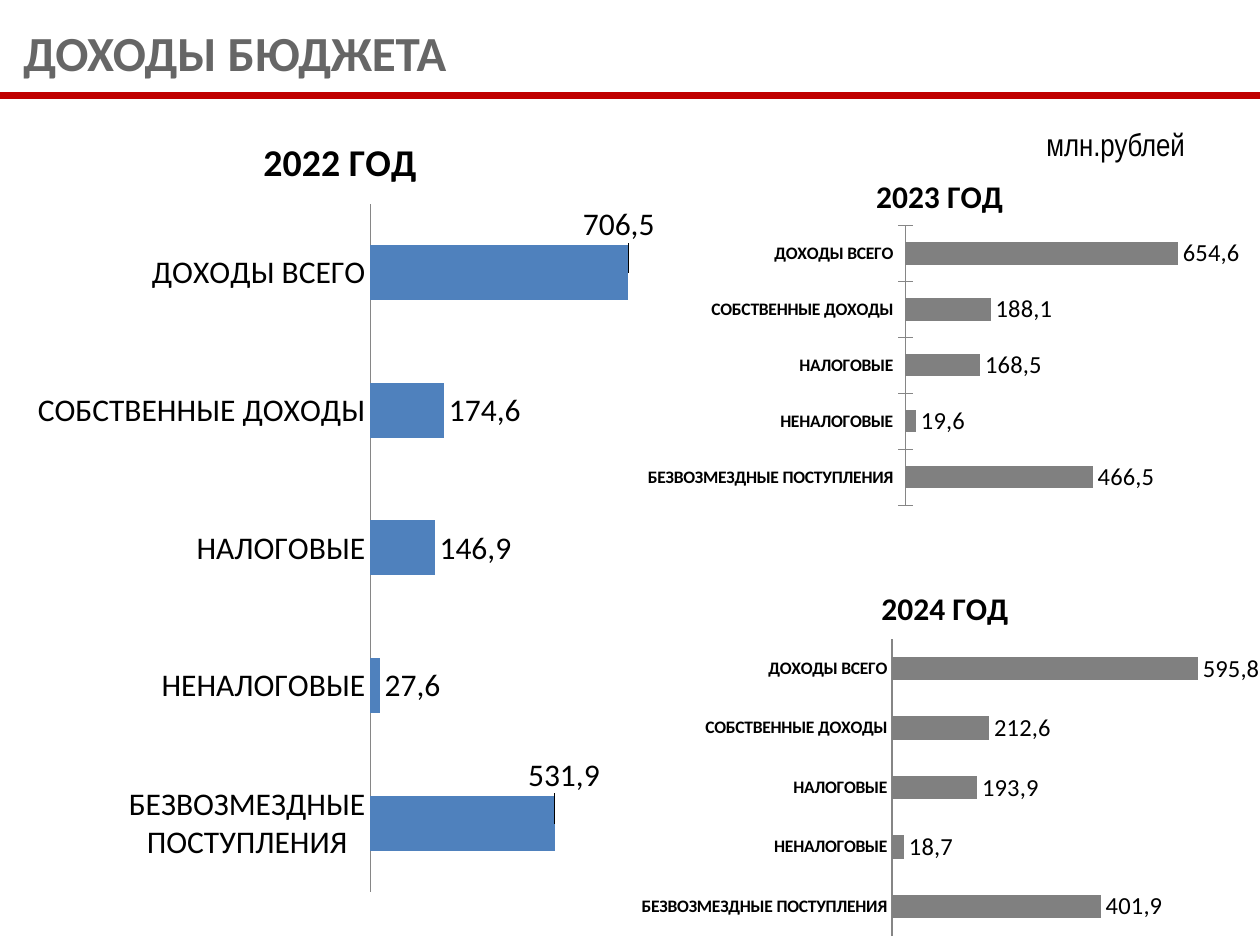
import pptx
import pptx.chart.data
import pptx.dml.color
import pptx.enum.chart
import pptx.enum.shapes
import pptx.enum.text
import pptx.oxml
import pptx.oxml.ns
import pptx.oxml.xmlchemy
import pptx.util

Inches, Pt = pptx.util.Inches, pptx.util.Pt
qn = pptx.oxml.ns.qn
new_element = pptx.oxml.xmlchemy.OxmlElement


def color(value):
    return pptx.dml.color.RGBColor.from_string(value)


def add_layout(parent, index, **settings):
    for old in parent.findall(qn("c:layout")):
        parent.remove(old)
    layout, manual = new_element("c:layout"), new_element("c:manualLayout")
    layout.append(manual)
    for name, value in settings.items():
        setting = new_element("c:" + name)
        setting.set("val", str(value))
        manual.append(setting)
    parent.insert(index, layout)


deck = pptx.Presentation()
deck.slide_width, deck.slide_height = Inches(10), Inches(7.5)
page = deck.slides.add_slide(deck.slide_layouts[6])

middle, top = pptx.enum.text.MSO_ANCHOR.MIDDLE, pptx.enum.text.MSO_ANCHOR.TOP
center, left = pptx.enum.text.PP_ALIGN.CENTER, pptx.enum.text.PP_ALIGN.LEFT
texts = [
    ((7.99, 0.99, 1.73, 0.31), middle, center, "Arial Narrow", 18, False, [("млн.рублей", "000000")]),
    ((0, 0.13, 10, 0.57), top, left, "Calibri", 28, True,
     [(" ", "376092"), ("ДОХОДЫ БЮДЖЕТА", "666666")]),
]
for place, anchor, align, font, size, bold, spans in texts:
    box = page.shapes.add_textbox(*map(Inches, place))
    box.text_frame.word_wrap = True
    box.text_frame.vertical_anchor = anchor
    para = box.text_frame.paragraphs[0]
    para.alignment = align
    for words, shade in spans:
        span = para.add_run()
        span.text = words
        span.font.name, span.font.size, span.font.bold = font, Pt(size), bold
        span.font.color.rgb = color(shade)

rule = page.shapes.add_connector(
    pptx.enum.shapes.MSO_CONNECTOR.STRAIGHT, 0, Inches(0.76), Inches(10), Inches(0.76))
rule.line.color.rgb = color("C00000")
rule.line.width = Pt(4)
rule._element.spPr.append(new_element("a:effectLst"))

categories = ["БЕЗВОЗМЕЗДНЫЕ ПОСТУПЛЕНИЯ", "НЕНАЛОГОВЫЕ", "НАЛОГОВЫЕ", "СОБСТВЕННЫЕ ДОХОДЫ", "ДОХОДЫ ВСЕГО"]
tick = pptx.enum.chart.XL_TICK_MARK
charts = [
    dict(title="2022 ГОД", place=(0.2, 0.84, 5, 6.38), plot=(2.94, 1.62, 2.16, 5.46),
         values=(406.4, 20.6, 141.8, 162.5, 568.9), labels=("531,9", "27,6", "146,9", "174,6", "706,5"),
         fill="4F81BD", title_size=21.6, axis_size=18, label_size=18, bold=False, overlap=-25,
         tick=tick.NONE, shifts={0: (-0.05, -0.06), 4: (-0.08, -0.06)}),
    dict(title="2023 ГОД", place=(5.08, 1.23, 4.76, 2.84), plot=(7.19, 1.79, 2.48, 2.22),
         values=(360, 20.2, 143.6, 163.8, 523.8), labels=("466,5", "19,6", "168,5", "188,1", "654,6"),
         fill="808080", title_size=18, axis_size=10, label_size=14, bold=True, overlap=0,
         tick=tick.CROSS, shifts={}),
    dict(title="2024 ГОД", place=(5, 4.5, 5, 3), plot=(7.08, 5.07, 2.78, 2.36),
         values=(357.6, 20.5, 145.8, 166.3, 523.8), labels=("401,9", "18,7", "193,9", "212,6", "595,8"),
         fill="808080", title_size=18, axis_size=10, label_size=14, bold=True, overlap=-25,
         tick=tick.NONE, shifts={}),
]
for item in charts:
    data = pptx.chart.data.CategoryChartData()
    data.categories = categories
    data.add_series("Series 1", item["values"])
    chart = page.shapes.add_chart(
        pptx.enum.chart.XL_CHART_TYPE.BAR_CLUSTERED, *map(Inches, item["place"]), data).chart
    chart.has_legend = False
    chart.font.name, chart.font.size = "Calibri", Pt(item["axis_size"])
    chart.font.color.rgb = color("000000")
    span = chart.chart_title.text_frame.paragraphs[0].add_run()
    span.text = item["title"]
    span.font.name, span.font.size, span.font.bold = "Calibri", Pt(item["title_size"]), True
    span.font.color.rgb = color("000000")

    axis = chart.category_axis
    axis.major_tick_mark, axis.minor_tick_mark = item["tick"], tick.NONE
    axis.tick_labels.font.size, axis.tick_labels.font.bold = Pt(item["axis_size"]), item["bold"]
    axis.tick_labels.font.color.rgb = color("000000")
    axis.format.line.color.rgb = color("868686")
    scale = chart.value_axis
    scale.visible = scale.has_major_gridlines = False
    scale.minimum_scale, scale.maximum_scale = 0, 600

    plot = chart.plots[0]
    plot.gap_width, plot.overlap, plot.vary_by_categories = 150, item["overlap"], False
    series = plot.series[0]
    series.format.fill.solid()
    series.format.fill.fore_color.rgb = color(item["fill"])
    labels = series.data_labels
    labels.show_value = True
    labels.position = pptx.enum.chart.XL_LABEL_POSITION.OUTSIDE_END
    labels.font.size, labels.font.bold = Pt(item["label_size"]), item["bold"]
    for number, words in enumerate(item["labels"]):
        label = series.points[number].data_label
        span = label.text_frame.paragraphs[0].add_run()
        span.text = words
        span.font.name, span.font.size, span.font.bold = "Calibri", Pt(item["label_size"]), False
        span.font.color.rgb = color("000000")
        label.position = pptx.enum.chart.XL_LABEL_POSITION.OUTSIDE_END
    for entry in labels._element.findall(qn("c:dLbl")):
        number = int(entry.find(qn("c:idx")).get("val"))
        if number in item["shifts"]:
            x, y = item["shifts"][number]
            add_layout(entry, 1, x=x, y=y)

    x, y, width, height = item["place"]
    inner = item["plot"]
    add_layout(chart._chartSpace.chart.plotArea, 0, layoutTarget="inner", xMode="edge", yMode="edge",
               x=round((inner[0] - x) / width, 3), y=round((inner[1] - y) / height, 3),
               w=round(inner[2] / width, 3), h=round(inner[3] / height, 3))

deck.save("out.pptx")
